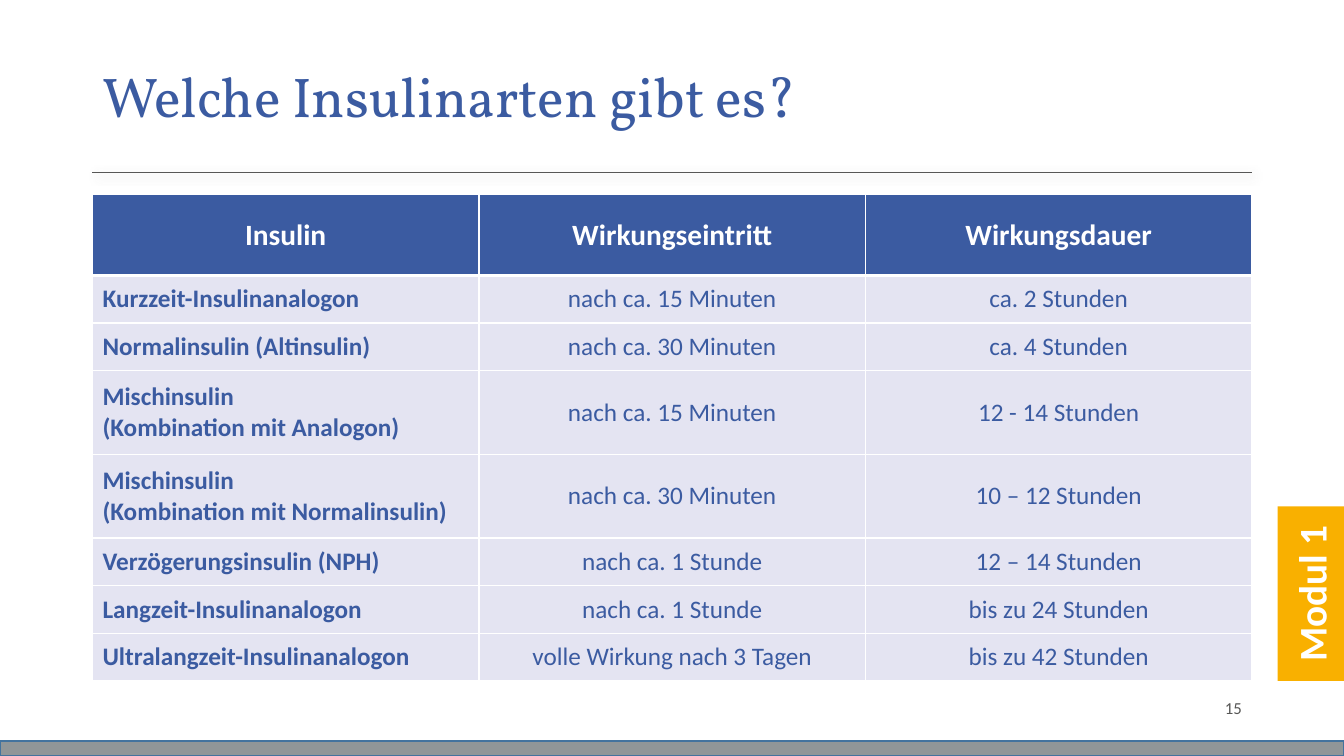
"""Build the slide that compares kinds of insulin by onset and duration."""
from lxml import etree
from pptx import Presentation
from pptx.dml.color import RGBColor
from pptx.enum.shapes import MSO_CONNECTOR, MSO_SHAPE
from pptx.enum.text import MSO_ANCHOR, PP_ALIGN
from pptx.oxml import parse_xml
from pptx.oxml.ns import nsdecls, qn
from pptx.util import Cm, Pt

RECT = MSO_SHAPE.RECTANGLE
LINE = MSO_CONNECTOR.STRAIGHT
MIDDLE = MSO_ANCHOR.MIDDLE
LEFT, CENTER, RIGHT = PP_ALIGN.LEFT, PP_ALIGN.CENTER, PP_ALIGN.RIGHT

THEME = {
    "blue": "3B5BA1", "pale": "E4E4F2", "white": "FFFFFF", "gold": "F9B000",
    "gray": "909698", "edge": "43739E", "dark": "575756",
    "title": 40, "tab": 28, "head": 21, "body": 18, "note": 12,
    "serif": "Vollkorn", "sans": "Calibri",
}


def color(name):
    """Return a theme colour."""
    return RGBColor.from_string(THEME[name])


def write(frame, text, size="body", tint="blue", face="sans", bold=False, align=CENTER):
    """Fill a text frame with one formatted paragraph."""
    frame.word_wrap = True
    frame.vertical_anchor = MIDDLE
    para = frame.paragraphs[0]
    para.text = text
    para.alignment = align
    for run in para.runs:
        run.font.size = Pt(THEME[size])
        run.font.name = THEME[face]
        run.font.bold = bold
        run.font.color.rgb = color(tint)
    return para


deck = Presentation()
deck.slide_width, deck.slide_height = Cm(33.87), Cm(19.05)
slide = deck.slides.add_slide(deck.slide_layouts[5])
shapes = slide.shapes
edge, width = 2.33, 29.22

title = shapes.title
title.left, title.top, title.width, title.height = Cm(edge), Cm(1), Cm(22), Cm(3)
para = write(title.text_frame, "Welche Insulinarten gibt es?", size="title", face="serif", align=LEFT)
para.line_spacing = 0.9

bar = shapes.add_shape(RECT, 0, Cm(18.67), deck.slide_width, Cm(0.38))
bar.shadow.inherit = False
bar.fill.solid()
bar.fill.fore_color.rgb = color("gray")
bar.line.color.rgb = color("edge")
bar.line.width = Pt(1)

rule = shapes.add_connector(LINE, Cm(edge), Cm(4.34), Cm(edge + width), Cm(4.34))
rule.line.color.rgb = color("dark")
rule.line.width = Pt(0.5)
rule._element.spPr.append(parse_xml(
    f'<a:effectLst {nsdecls("a")}><a:outerShdw blurRad="{Pt(7)}" dist="{Pt(3)}" dir="2700000">'
    f'<a:srgbClr val="{THEME["dark"]}"><a:alpha val="50000"/></a:srgbClr>'
    '</a:outerShdw></a:effectLst>'))

page = shapes.add_textbox(Cm(23.93), Cm(17.32), Cm(7.62), Cm(1.02))
write(page.text_frame, "15", size="note", tint="dark", align=RIGHT)

rows = [
    ("Insulin", "Wirkungseintritt", "Wirkungsdauer"),
    ("Kurzzeit-Insulinanalogon", "nach ca. 15 Minuten", "ca. 2 Stunden"),
    ("Normalinsulin (Altinsulin)", "nach ca. 30 Minuten", "ca. 4 Stunden"),
    ("Mischinsulin \n(Kombination mit Analogon)", "nach ca. 15 Minuten", "12 - 14 Stunden"),
    ("Mischinsulin \n(Kombination mit Normalinsulin)", "nach ca. 30 Minuten", "10 – 12 Stunden"),
    ("Verzögerungsinsulin (NPH)", "nach ca. 1 Stunde", "12 – 14 Stunden"),
    ("Langzeit-Insulinanalogon", "nach ca. 1 Stunde", "bis zu 24 Stunden"),
    ("Ultralangzeit-Insulinanalogon", "volle Wirkung nach 3 Tagen", "bis zu 42 Stunden"),
]
table = shapes.add_table(len(rows), 3, Cm(edge), Cm(4.91), Cm(width), Cm(12.25)).table
for col in table.columns:
    col.width = Cm(width / 3)
for r, row in enumerate(rows):
    head = r == 0
    table.rows[r].height = Cm(2.03 if head else 2.11 if "\n" in row[0] else 1.2)
    for c, text in enumerate(row):
        cell = table.cell(r, c)
        write(cell.text_frame, text, size="head" if head else "body",
              tint="white" if head else "blue", bold=head or c == 0,
              align=LEFT if c == 0 and not head else CENTER)
        cell.vertical_anchor = MIDDLE
        cell.fill.solid()
        cell.fill.fore_color.rgb = color("blue" if head else "pale")
        props = cell._tc.get_or_add_tcPr()
        for i, side in enumerate("LRTB"):
            thick = (head and side == "B") or (r == 1 and side == "T")
            line = etree.Element(qn(f"a:ln{side}"), w=str(Pt(3 if thick else 1)))
            fill = etree.SubElement(line, qn("a:solidFill"))
            etree.SubElement(fill, qn("a:srgbClr"), val=THEME["white"])
            props.insert(i, line)

tab = shapes.add_shape(RECT, Cm(30.84), Cm(14.12), Cm(4.4), Cm(1.68))
tab.rotation = 270
tab.shadow.inherit = False
tab.fill.solid()
tab.fill.fore_color.rgb = color("gold")
tab.line.fill.background()
write(tab.text_frame, "Modul 1", size="tab", tint="white", bold=True)

deck.save("out.pptx")
